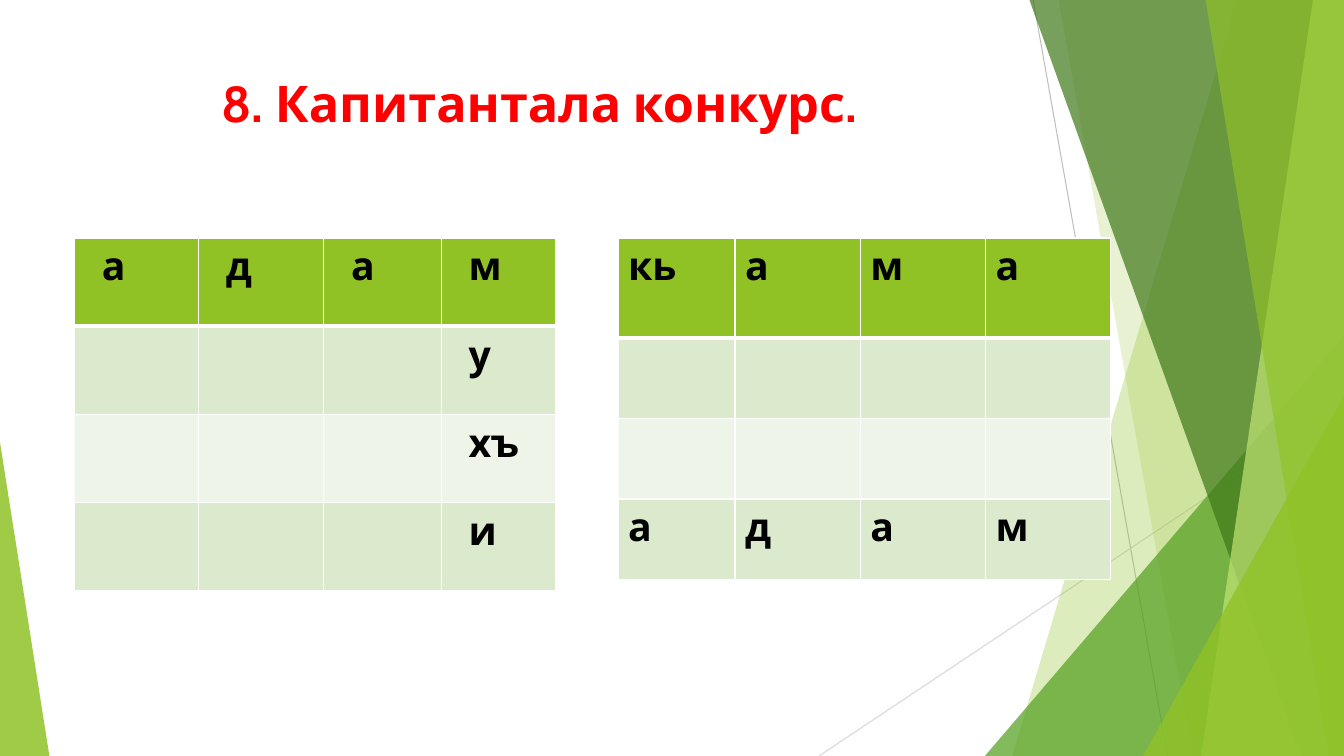
from lxml.etree import SubElement
from pptx import Presentation
from pptx.dml.color import RGBColor
from pptx.enum.shapes import MSO_CONNECTOR, MSO_SHAPE
from pptx.enum.text import MSO_ANCHOR, MSO_AUTO_SIZE, PP_ALIGN
from pptx.oxml import parse_xml
from pptx.oxml.ns import nsdecls, qn
from pptx.util import Pt

WIDTH, HEIGHT = 960, 540
FONT = "Cabin"
GREEN, WHITE, BLACK, RED = "90C226", "FFFFFF", "000000", "FF0000"
BANDS = ["DBE9CD", "EEF4E8"]


def color(value):
    return RGBColor.from_string(value)


def paint(shape, fill, opacity):
    """Give a shape a translucent fill, with no line or shadow."""
    shape.shadow.inherit = False
    shape.line.fill.background()
    shape.fill.solid()
    shape.fill.fore_color.rgb = color(fill)
    tint = shape._element.spPr.find(qn("a:solidFill"))[0]
    SubElement(tint, qn("a:alpha"), val=str(opacity * 1000))


def add_line(slide, start, end, line_color):
    line = slide.shapes.add_connector(
        MSO_CONNECTOR.STRAIGHT, *(Pt(value) for value in start + end))
    line.line.color.rgb = color(line_color)
    line.line.width = Pt(0.75)
    SubElement(line._element.spPr, qn("a:effectLst"))


def add_shard(slide, top_x, bottom_x, fill, opacity):
    """Draw a band from a slanted left edge to the slide's right edge."""
    top = -1
    builder = slide.shapes.build_freeform(Pt(top_x), Pt(top))
    corners = [(WIDTH, top), (WIDTH, HEIGHT), (bottom_x, HEIGHT)]
    builder.add_line_segments([(Pt(x), Pt(y)) for x, y in corners])
    paint(builder.convert_to_shape(), fill, opacity)


def add_corner(slide, left, top, width, apex, fill, opacity):
    """Draw a triangle that stands on the slide's bottom edge."""
    triangle = slide.shapes.add_shape(
        MSO_SHAPE.ISOSCELES_TRIANGLE, Pt(left), Pt(top), Pt(width), Pt(HEIGHT - top))
    triangle.adjustments[0] = apex
    paint(triangle, fill, opacity)


def add_decoration(slide):
    add_line(slide, (738, 0), (834, HEIGHT), "BFBFBF")
    add_line(slide, (WIDTH, 290), (585, HEIGHT), "D9D9D9")
    add_shard(slide, 884, 723, GREEN, 30)
    add_shard(slide, 756, 852, GREEN, 20)
    add_corner(slide, 703.5, 240, 256.5, 1, "54A021", 72)
    add_shard(slide, 735, 929.5, "3F7819", 70)
    add_shard(slide, 938, 858, "C0E474", 70)
    add_shard(slide, 861, 949, GREEN, 65)
    add_corner(slide, 816.5, 283, 143.5, 1, GREEN, 80)
    add_corner(slide, 0, 316, 35.3, 0, GREEN, 85)


def format_run(run, size, text_color):
    run.font.name = FONT
    run.font.size = Pt(size)
    run.font.bold = True
    run.font.color.rgb = color(text_color)


def add_title(slide, left, top, width, height):
    title = slide.shapes.title
    title.left, title.top = Pt(left), Pt(top)
    title.width, title.height = Pt(width), Pt(height)
    frame = title.text_frame
    frame.text = "8. Капитантала конкурс."
    frame.word_wrap = True
    frame.auto_size = MSO_AUTO_SIZE.NONE
    frame.vertical_anchor = MSO_ANCHOR.TOP
    frame.margin_left = Pt(105)
    paragraph = frame.paragraphs[0]
    paragraph.alignment = PP_ALIGN.LEFT
    format_run(paragraph.runs[0], 36, RED)


def set_borders(cell, row):
    """Draw white borders, thicker between the header and the body."""
    widths = {"L": 1, "R": 1, "T": 3 if row == 1 else 1, "B": 3 if row == 0 else 1}
    properties = cell._tc.get_or_add_tcPr()
    for position, (side, width) in enumerate(widths.items()):
        properties.insert(position, parse_xml(
            f'<a:ln{side} {nsdecls("a")} w="{Pt(width)}"><a:solidFill>'
            f'<a:srgbClr val="{WHITE}"/></a:solidFill></a:ln{side}>'))


def add_word_grid(slide, left, top, columns, rows, letters, side_margin):
    table = slide.shapes.add_table(
        len(rows), len(columns), Pt(left), Pt(top), Pt(sum(columns)), Pt(sum(rows))).table
    for column, width in zip(table.columns, columns):
        column.width = Pt(width)
    for row, height in enumerate(rows):
        table.rows[row].height = Pt(height)
        for column, letter in enumerate(letters[row]):
            cell = table.cell(row, column)
            cell.fill.solid()
            cell.fill.fore_color.rgb = color(BANDS[(row - 1) % 2] if row else GREEN)
            cell.margin_left = cell.margin_right = Pt(side_margin)
            set_borders(cell, row)
            if letter:
                cell.text_frame.text = letter
                format_run(cell.text_frame.paragraphs[0].runs[0], 28, BLACK)


def main():
    presentation = Presentation()
    presentation.slide_width, presentation.slide_height = Pt(WIDTH), Pt(HEIGHT)
    slide = presentation.slides.add_slide(presentation.slide_layouts[5])
    add_decoration(slide)
    add_title(slide, 53.3, 48, 677, 104)
    empty = [""] * 4
    add_word_grid(slide, 53.3, 170, [88.5, 89.5, 84, 81.5], [63] * 4,
                  ["адам"] + [["", "", "", letter] for letter in ("у", "хъ", "и")], 19.5)
    add_word_grid(slide, 441.5, 170, [83.5, 89.5, 89.5, 89.5], [71.3, 57.6, 57.6, 57.6],
                  [["кь", "а", "м", "а"], empty, empty, "адам"], 7.2)
    presentation.save("out.pptx")


if __name__ == "__main__":
    main()
